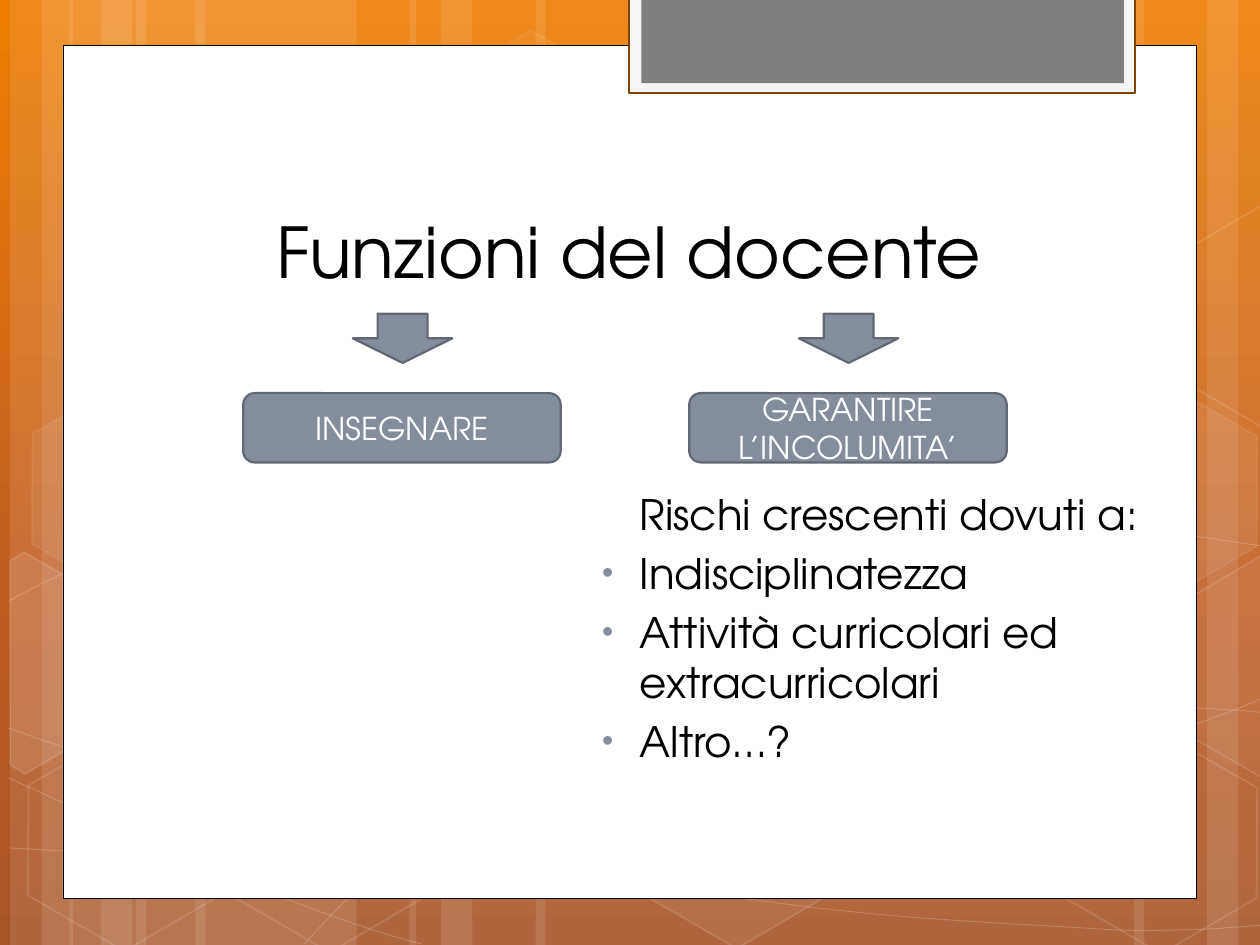
import math

import lxml.etree
import pptx
import pptx.dml.color
import pptx.enum.shapes
import pptx.enum.text
import pptx.oxml.ns
import pptx.util

SHAPE = pptx.enum.shapes.MSO_SHAPE
ANCHOR = pptx.enum.text.MSO_ANCHOR
ALIGN = pptx.enum.text.PP_ALIGN
FONT = "TeX Gyre Adventor"
WHITE, BLACK, SLATE, SLATE_EDGE = "FFFFFF", "000000", "838D9B", "616873"
TILT = 30

# Content; places and sizes are in inches
TITLE = "Funzioni del docente"
FUNCTIONS = ["INSEGNARE", "GARANTIRE L’INCOLUMITA’"]
RISKS_INTRO = "Rischi crescenti dovuti a:"
RISKS = ["Indisciplinatezza", "Attività curricolari ed extracurricolari", "Altro…?"]

BACKDROP = [(0, "EE7D00"), (62, "C05E23"), (100, "A85526")]
STRIPES = [  # left, width
    (1.08, 1.75), (0.08, 0.5), (0.33, 0.83), (1.55, 1.75), (0.55, 0.5), (0.8, 0.83),
    (7.33, 1.75), (9.58, 0.5), (9, 0.83), (4.25, 3.08), (3.25, 0.5), (3.5, 0.83),
]
WAVES = [  # start point, then three points for each Bézier curve
    [(0.07, 6.73), (0.61, 6.76), (1.15, 6.79), (1.9, 6.78), (2.65, 6.77), (3.58, 6.75),
     (4.58, 6.65), (5.58, 6.55), (7, 6.36), (7.92, 6.17), (8.83, 5.98), (9.77, 5.68),
     (10.07, 5.51)],
    [(0.07, 4.77), (0.36, 4.61), (0.65, 4.46), (1.21, 4.31), (1.78, 4.16), (2.59, 3.94),
     (3.47, 3.87), (4.36, 3.8), (5.44, 3.79), (6.54, 3.87), (7.64, 3.95), (9.47, 4.26),
     (10.07, 4.34)],
    [(0.06, 6.17), (1.27, 6.72), (2.47, 7.27), (3.34, 7.49)],
    [(0.07, 5.78), (0.38, 5.89), (0.7, 6), (1.28, 6.16), (1.86, 6.31), (2.73, 6.56),
     (3.57, 6.73), (4.4, 6.9), (5.45, 7.08), (6.28, 7.18), (7.11, 7.29), (8, 7.33),
     (8.53, 7.36), (9.05, 7.4), (9.19, 7.38), (9.45, 7.38), (9.71, 7.37), (9.89, 7.35),
     (10.07, 7.34)],
    [(2.42, 7.49), (2.6, 7.29), (2.78, 7.09), (3.02, 6.91), (3.26, 6.73), (3.6, 6.53),
     (3.88, 6.39), (4.16, 6.25), (4.33, 6.19), (4.7, 6.09), (5.06, 5.99), (5.73, 5.85),
     (6.08, 5.78), (6.44, 5.71), (6.49, 5.71), (6.8, 5.69), (7.11, 5.66), (7.6, 5.63),
     (7.94, 5.62), (8.29, 5.61), (8.86, 5.62), (8.86, 5.62), (9.08, 5.62), (9.31, 5.62),
     (9.53, 5.62), (9.71, 5.63), (9.88, 5.64), (9.97, 5.65), (10.06, 5.66), (10.03, 5.65),
     (10.06, 5.66)],
]
HEXAGONS = [  # left, top, fill opacity, line opacity
    (3.34, 0.36, 4, 8), (4.97, 5.89, 6, 12), (0.11, 5.91, 0, 12), (0.14, 3.12, 7, 8),
    (1.74, 5.92, 0, 12), (7.53, 4.53, 10, 12), (8.34, 5.93, 0, 12), (8.34, 3.14, 7, 8),
]
CUT_HEXAGONS = [  # center, corners as they lie on the slide, fill opacity
    ((0.36, 5.35),
     [(0.08, 4.45), (0.19, 4.38), (0.96, 4.82), (0.95, 5.7), (0.2, 6.14), (0.08, 6.07)], 10),
    ((9.85, 5.2),
     [(9.26, 4.85), (10.01, 4.41), (10.09, 4.46), (10.09, 6.13), (10.02, 6.17), (9.26, 5.73)], 4),
    ((9.85, 2.41),
     [(9.26, 2.07), (10.01, 1.63), (10.1, 1.68), (10.09, 3.35), (10.02, 3.39), (9.26, 2.95)], 0),
]


def length(inches):
    return pptx.util.Cm(inches * 2.54)


def rgb(code):
    return pptx.dml.color.RGBColor.from_string(code)


def add_xml(parent, tag, **attributes):
    return lxml.etree.SubElement(parent, pptx.oxml.ns.qn(tag), attributes)


def paint(fill, holder, code, opacity):
    """Fill with one colour; holder is the XML element that contains the fill."""
    if not code or not opacity:
        fill.background()
        return
    fill.solid()
    fill.fore_color.rgb = rgb(code)
    if opacity < 100:
        colour = holder.find(pptx.oxml.ns.qn("a:solidFill"))[0]
        add_xml(colour, "a:alpha", val=str(opacity * 1000))


def style(shape, fill=None, opacity=100, line=None, width=1, line_opacity=100):
    shape.shadow.inherit = False
    properties = shape.element.spPr
    paint(shape.fill, properties, fill, opacity)
    shape.line.width = pptx.util.Pt(width)
    paint(shape.line.fill, properties.find(pptx.oxml.ns.qn("a:ln")), line, line_opacity)
    return shape


def add_box(slide, kind, place, **look):
    return style(slide.shapes.add_shape(kind, *map(length, place)), **look)


def add_outline(slide, points, close, **look):
    start, *rest = [(length(x), length(y)) for x, y in points]
    builder = slide.shapes.build_freeform(*start)
    builder.add_line_segments(rest, close=close)
    return style(builder.convert_to_shape(), **look)


def bend(outline):
    """Turn each three straight segments into one cubic Bézier curve."""
    segments = list(outline.element.iter(pptx.oxml.ns.qn("a:lnTo")))
    for first in range(0, len(segments), 3):
        curve = add_xml(segments[first].getparent(), "a:cubicBezTo")
        for segment in segments[first:first + 3]:
            curve.append(segment[0])
            segment.getparent().remove(segment)


def turn_back(point, center):
    """Undo the tilt of a point about the center."""
    dx, dy = point[0] - center[0], point[1] - center[1]
    cos, sin = math.cos(math.radians(TILT)), math.sin(math.radians(TILT))
    return center[0] + dx * cos + dy * sin, center[1] - dx * sin + dy * cos


def write(shape, text, size, colour, align, anchor):
    frame = shape.text_frame
    frame.word_wrap = True
    frame.vertical_anchor = anchor
    frame.text = text
    for paragraph in frame.paragraphs:
        paragraph.alignment = align
        for run in paragraph.runs:
            run.font.name = FONT
            run.font.size = pptx.util.Pt(size)
            run.font.color.rgb = rgb(colour)
    return frame


def add_backdrop(slide):
    fill = slide.background.fill
    fill.gradient()
    fill.gradient_angle = 270
    stops = next(slide.element.iter(pptx.oxml.ns.qn("a:gsLst")))
    for stop in list(stops):
        stops.remove(stop)
    for percent, code in BACKDROP:
        stop = add_xml(stops, "a:gs", pos=str(percent * 1000))
        add_xml(stop, "a:srgbClr", val=code)

    for left, width in STRIPES:
        add_box(slide, SHAPE.RECTANGLE, (left, 0, width, 7.5), fill=WHITE, opacity=10)
    for nodes in WAVES:
        bend(add_outline(slide, nodes, False, line=WHITE, width=0.5, line_opacity=20))
    for left, top, opacity, line_opacity in HEXAGONS:
        hexagon = add_box(slide, SHAPE.HEXAGON, (left, top, 1.75, 1.52), fill=WHITE,
                          opacity=opacity, line=WHITE, line_opacity=line_opacity)
        hexagon.adjustments[0] = 0.285
        hexagon.rotation = TILT
    for center, corners, opacity in CUT_HEXAGONS:
        upright = [turn_back(corner, center) for corner in corners]
        add_outline(slide, upright, True, fill=WHITE, opacity=opacity, line=WHITE,
                    line_opacity=12).rotation = TILT

    add_box(slide, SHAPE.RECTANGLE, (0.5, 0.36, 9, 6.77), fill=WHITE, line=BLACK, width=0.5)
    add_box(slide, SHAPE.RECTANGLE, (4.99, -0.02, 4.02, 0.76), fill="F5F5F5",
            line="804300", width=1.25)
    add_box(slide, SHAPE.RECTANGLE, (5.09, -0.02, 3.83, 0.68), fill="7F7F7F")


def add_risks(slide):
    area = slide.shapes.add_textbox(*map(length, (4.6, 3.83, 4.57, 2.52)))
    frame = write(area, "\n".join([RISKS_INTRO] + RISKS), 24, BLACK, ALIGN.LEFT, ANCHOR.TOP)
    for index, paragraph in enumerate(frame.paragraphs):
        paragraph.space_before = pptx.util.Pt(4.8)
        properties = paragraph._p.get_or_add_pPr()
        properties.set("marL", str(length(0.38)))
        if index:
            properties.set("indent", str(length(-0.3)))
            add_xml(add_xml(properties, "a:buClr"), "a:srgbClr", val=SLATE)
            add_xml(properties, "a:buSzPct", val="76000")
            add_xml(properties, "a:buFont", typeface="Arial")
            add_xml(properties, "a:buChar", char="•")


def main():
    deck = pptx.Presentation()
    deck.slide_width, deck.slide_height = length(10), length(7.5)
    slide = deck.slides.add_slide(deck.slide_layouts[6])
    add_backdrop(slide)

    heading = slide.shapes.add_textbox(*map(length, (1.15, 1.12, 7.68, 1.25)))
    write(heading, TITLE, 40, BLACK, ALIGN.CENTER, ANCHOR.BOTTOM)
    add_risks(slide)

    for column, function in enumerate(FUNCTIONS):
        center = 3.19 + 3.54 * column
        look = dict(fill=SLATE, line=SLATE_EDGE, width=1.25)
        add_box(slide, SHAPE.DOWN_ARROW, (center - 0.39, 2.49, 0.79, 0.39), **look)
        label = add_box(slide, SHAPE.ROUNDED_RECTANGLE, (center - 1.26, 3.12, 2.52, 0.55), **look)
        write(label, function, 18, WHITE, ALIGN.CENTER, ANCHOR.MIDDLE)

    deck.save("out.pptx")


if __name__ == "__main__":
    main()
